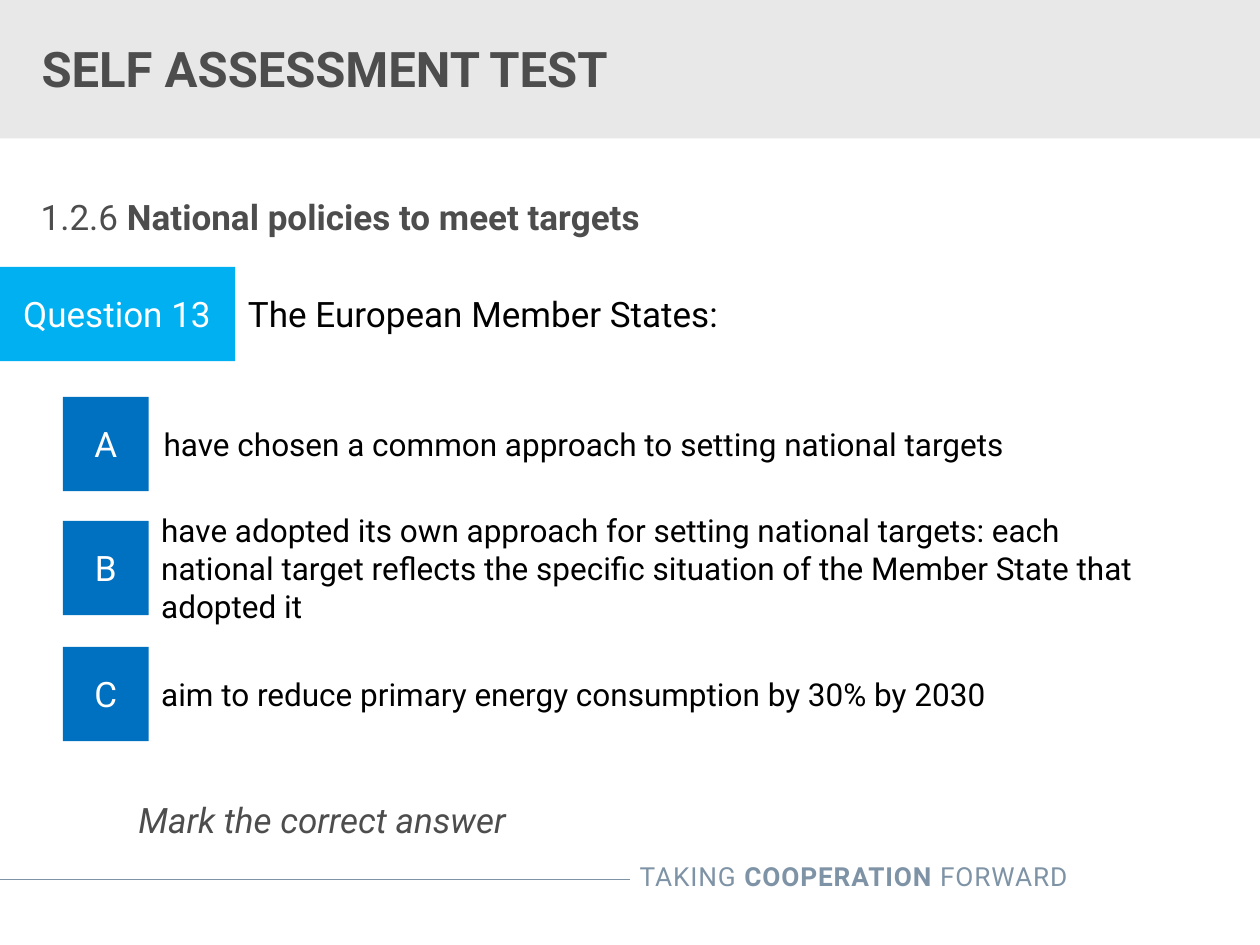
from lxml import etree
from pptx import Presentation
from pptx import util as u
from pptx.dml.color import RGBColor
from pptx.enum import shapes, text
from pptx.oxml.ns import qn

COLORS = {
    "band": "E8E8E8", "title": "4D4D4E", "footer": "7E93A5",
    "question": "00B0F0", "answer": "0070C0",
    "white": "FFFFFF", "black": "000000",
}
LEFT, CENTER, RIGHT = text.PP_ALIGN.LEFT, text.PP_ALIGN.CENTER, text.PP_ALIGN.RIGHT


def rgb(name):
    return RGBColor.from_string(COLORS[name])


class SlideBuilder:
    font = "Roboto"

    def __init__(self, s):
        self.s = s

    def add_words(self, sp, runs, size, color, align=LEFT, inset=0.25, spacing=0):
        """Fill a shape with one paragraph of (text, format) runs."""
        tf = sp.text_frame
        frame_format = {
            "word_wrap": True, "vertical_anchor": text.MSO_ANCHOR.MIDDLE,
            "margin_left": u.Cm(inset), "margin_right": u.Cm(inset),
            "margin_top": 0, "margin_bottom": 0,
        }
        for key, value in frame_format.items():
            setattr(tf, key, value)
        p = tf.paragraphs[0]
        p.alignment = align
        for words, extra in runs:
            r = p.add_run()
            r.text = words
            run_format = {"name": self.font, "size": u.Pt(size), "bold": False, **extra}
            for key, value in run_format.items():
                setattr(r.font, key, value)
            r.font.color.rgb = rgb(color)
            if spacing:
                r._r.get_or_add_rPr().set("spc", str(spacing))

    def block(self, box, fill, label=None):
        sp = self.s.shapes.add_shape(shapes.MSO_SHAPE.RECTANGLE, *map(u.Cm, box))
        sp.shadow.inherit = False
        sp.fill.solid()
        sp.fill.fore_color.rgb = rgb(fill)
        sp.line.fill.background()
        if label:
            self.add_words(sp, [(label, {})], 20, "white", CENTER)

    def label(self, box, runs, size, color, **options):
        sp = self.s.shapes.add_textbox(*map(u.Cm, box))
        self.add_words(sp, runs, size, color, **options)

    def rule(self, start, end, color, width):
        ln = self.s.shapes.add_connector(
            shapes.MSO_CONNECTOR.STRAIGHT, *map(u.Cm, start + end))
        ln.line.color.rgb = rgb(color)
        ln.line.width = u.Pt(width)
        etree.SubElement(ln._element.spPr, qn("a:effectLst"))


def main():
    prs = Presentation()
    prs.slide_width, prs.slide_height = u.Cm(25.4), u.Cm(19.05)
    b = SlideBuilder(prs.slides.add_slide(prs.slide_layouts[6]))
    row_height = 1.9

    # Footer
    b.rule((0, 17.73), (12.7, 17.73), "footer", 0.75)
    b.label((9.86, 17.22, 11.91, 0.89),
            [("TAKING ", {}), ("COOPERATION", {"bold": True}), (" FORWARD", {})],
            15, "footer", align=RIGHT, spacing=50)

    # Title band and section heading
    b.block((0, 0, 25.4, 2.79), "band")
    b.label((0, 0.41, 18.3, row_height), [("SELF ASSESSMENT TEST", {"bold": True})],
            28, "title", inset=0.84)
    b.label((0.82, 3.93, 23.77, 0.86),
            [("1.2.6 ", {}), ("National policies to meet targets", {"bold": True})],
            20, "title", inset=0)

    # Question
    b.block((-0.02, 5.38, 4.76, row_height), "question", "Question 13")
    b.label((4.75, 5.38, 20.7, row_height), [("The European Member States:", {})],
            20, "black")

    # Answers: letter, top, text left, wording
    answers = [
        ("A", 8.0, 3.05, "have chosen a common approach to setting national targets"),
        ("B", 10.5, 3.0, "have adopted its own approach for setting national targets: "
         "each national target reflects the specific situation of the Member State "
         "that adopted it"),
        ("C", 13.04, 3.0, "aim to reduce primary energy consumption by 30% by 2030"),
    ]
    for letter, top, left, wording in answers:
        b.block((1.27, top, 1.73, row_height), "answer", letter)
        b.label((left, top, 20.7, row_height), [(wording, {})], 18, "black")

    # Instruction
    b.label((2.79, 16.1, 20, 0.86), [("Mark the correct answer", {"italic": True})],
            20, "title", inset=0)

    prs.save("out.pptx")


if __name__ == "__main__":
    main()
